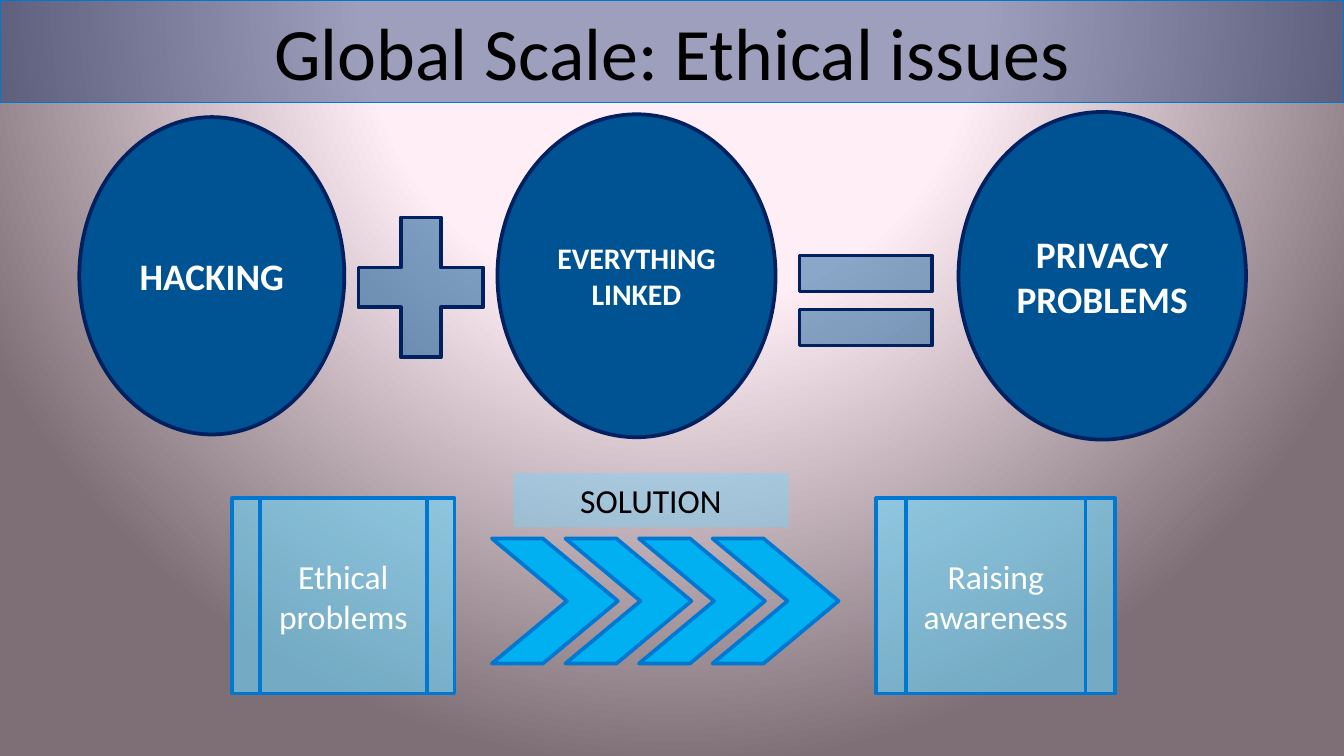
from lxml import etree
from pptx import Presentation
from pptx.dml.color import RGBColor
from pptx.enum import shapes, text
from pptx.oxml import ns
from pptx.util import Pt

KIND = shapes.MSO_SHAPE
NAVY, BLUE, DEEP, SKY = "002060", "0078D2", "005392", "6DD9FF"


def tint(color, value):
    color.rgb = RGBColor.from_string(value)


def write(shape, words, size=18, color="FFFFFF", bold=False, anchor="MIDDLE"):
    frame = shape.text_frame
    frame.word_wrap = True
    frame.vertical_anchor = getattr(text.MSO_ANCHOR, anchor)
    line = frame.paragraphs[0]
    line.alignment = text.PP_ALIGN.CENTER
    run = line.add_run()
    run.text = words
    run.font.name = "Calibri"
    run.font.size = Pt(size)
    run.font.bold = bold
    tint(run.font.color, color)


def draw(slide, kind, box, fill, alpha=100, edge=None, width=2):
    shape = slide.shapes.add_shape(kind, *map(Pt, box))
    shape.shadow.inherit = False
    shape.fill.solid()
    tint(shape.fill.fore_color, fill)
    if alpha < 100:
        color = shape.fill._xPr.find(".//" + ns.qn("a:srgbClr"))
        etree.SubElement(color, ns.qn("a:alpha"), val=str(alpha * 1000))
    if edge:
        tint(shape.line.color, edge)
        shape.line.width = Pt(width)
    else:
        shape.line.fill.background()
    return shape


def backdrop(slide):
    fill = slide.background.fill
    fill.gradient()
    grad = slide.element.find(".//" + ns.qn("a:gradFill"))
    for child in list(grad):
        grad.remove(child)
    stops = etree.SubElement(grad, ns.qn("a:gsLst"))
    for place, value in ((0, "FFF1F8"), (40, "FFEEF6"), (100, "7E6E75")):
        stop = etree.SubElement(stops, ns.qn("a:gs"), pos=str(place * 1000))
        etree.SubElement(stop, ns.qn("a:srgbClr"), val=value)
    path = etree.SubElement(grad, ns.qn("a:path"), path="circle")
    etree.SubElement(path, ns.qn("a:fillToRect"),
                     l="50000", t="-80000", r="50000", b="180000")


def header(slide, box):
    bar = draw(slide, KIND.RECTANGLE, box, NAVY, 38, BLUE, 0.75)
    write(bar, "Global Scale: Ethical issues", 39.6, "000000")


def answer(slide, box):
    left, top, wide, high = box
    for step in range(4):
        place = (left + 139 + step * 39.4, top + 35, 67.5, 67)
        arrow = draw(slide, KIND.CHEVRON, place, "00B0F0", edge=BLUE)
        arrow.adjustments[0] = 0.6
    for words, start, width in (("Ethical problems", 0, 119),
                                ("Raising awareness", wide - 128, 128)):
        place = (left + start, top + 13.5, width, high - 13.5)
        card = draw(slide, KIND.FLOWCHART_PREDEFINED_PROCESS, place, SKY, 57, BLUE)
        write(card, words)
    label = draw(slide, KIND.RECTANGLE, (left + 150.5, top, 147.5, 29), SKY, 40)
    write(label, "SOLUTION", color="000000", anchor="TOP")


def equation(slide, box):
    left, top, wide, high = box
    terms = (("HACKING", 0, 142, 170, 20),
             ("PRIVACY PROBLEMS", wide - 154, 154, 175.5, 20),
             ("EVERYTHING LINKED", 224, 149, 173, 16))
    for words, start, width, tall, size in terms:
        place = (left + start, top + (high - tall) / 2, width, tall)
        disc = draw(slide, KIND.OVAL, place, DEEP, edge=NAVY)
        write(disc, words, size, bold=True)
    signs = ((KIND.MATH_PLUS, (137.5, 43, 91, 102), 50),
             (KIND.MATH_EQUAL, (373, 60, 96.5, 82), 46))
    for kind, (start, drop, width, tall), alpha in signs:
        draw(slide, kind, (left + start, top + drop, width, tall), DEEP, alpha, NAVY)


def main():
    deck = Presentation()
    deck.slide_width, deck.slide_height = Pt(720), Pt(405)
    slide = deck.slides.add_slide(deck.slide_layouts[6])
    backdrop(slide)
    header(slide, (0, 0, 720, 55))
    answer(slide, (124.5, 253.5, 473, 118))
    equation(slide, (42.5, 60, 625, 175.5))
    deck.save("out.pptx")


if __name__ == "__main__":
    main()
